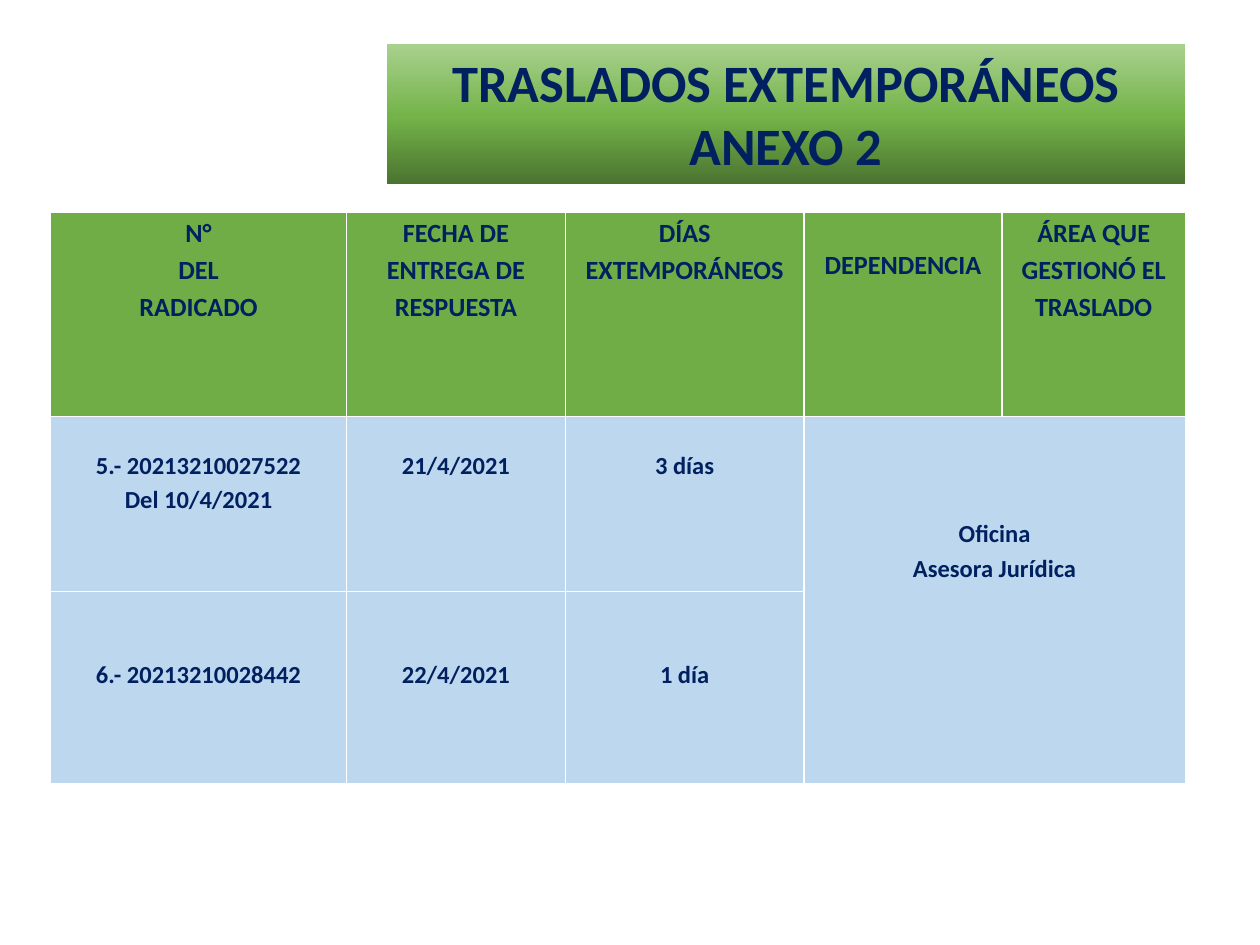
from copy import deepcopy

from pptx import Presentation
from pptx.dml.color import RGBColor
from pptx.enum import shapes, text
from pptx.oxml import parse_xml
from pptx.oxml.ns import nsdecls, qn
from pptx.util import Pt

NAVY, GREEN, PALE_BLUE, WHITE = "002060", "70AD47", "BDD7EE", "FFFFFF"
TITLE_GRADIENT = [(0, "4B7430"), (0.48, "74B349"), (1, "A9D18E")]

COLUMN_WIDTHS = [169, 125.2, 136.2, 113.3, 104.8]
ROW_HEIGHTS = [116.5, 100, 110]
# Each cell: its lines and the space above them
HEADINGS = [
    (["N°", "DEL", "RADICADO"], 0),
    (["FECHA DE", "ENTREGA DE", "RESPUESTA"], 0),
    (["DÍAS EXTEMPORÁNEOS"], 0),
    (["DEPENDENCIA"], 18.3),
    (["ÁREA QUE GESTIONÓ EL TRASLADO"], 0),
]
TRANSFERS = [
    [(["5.- 20213210027522", "Del 10/4/2021"], 17.1),
     (["21/4/2021"], 17.1),
     (["3 días"], 17.1),
     (["Oficina", "Asesora Jurídica"], 56.3)],
    [(["6.- 20213210028442"], 36.7),
     (["22/4/2021"], 36.7),
     (["1 día"], 36.7)],
]


def color(hex_string):
    return RGBColor.from_string(hex_string)


def write_lines(frame, lines, size, spacing=None):
    frame.word_wrap = True
    for index, line in enumerate(lines):
        paragraph = frame.paragraphs[0] if index == 0 else frame.add_paragraph()
        paragraph.text = line
        paragraph.alignment = text.PP_ALIGN.CENTER
        paragraph.line_spacing = spacing
        paragraph.font.name = "Calibri"
        paragraph.font.size = Pt(size)
        paragraph.font.bold = True
        paragraph.font.color.rgb = color(NAVY)


def add_title(slide, left, top, width, height):
    banner = slide.shapes.add_shape(
        shapes.MSO_SHAPE.RECTANGLE, Pt(left), Pt(top), Pt(width), Pt(height))
    banner.shadow.inherit = False
    banner.line.fill.background()

    # Three-stop gradient running upwards
    banner.fill.gradient()
    banner.fill.gradient_angle = 90
    stop_list = banner._element.spPr.find(".//" + qn("a:gsLst"))
    stop_list.append(deepcopy(stop_list[-1]))
    for stop, (position, shade) in zip(banner.fill.gradient_stops, TITLE_GRADIENT):
        stop.position = position
        stop.color.rgb = color(shade)

    banner.text_frame.vertical_anchor = text.MSO_ANCHOR.TOP
    write_lines(banner.text_frame, ["TRASLADOS EXTEMPORÁNEOS", "ANEXO 2"], 30)


def style_cell(cell, fill):
    # Borders come before the fill in the cell properties
    properties = cell._tc.get_or_add_tcPr()
    for side in ("lnL", "lnR", "lnT", "lnB"):
        properties.append(parse_xml(
            f'<a:{side} {nsdecls("a")} w="{Pt(1)}"><a:solidFill>'
            f'<a:srgbClr val="{WHITE}"/></a:solidFill></a:{side}>'))
    cell.fill.solid()
    cell.fill.fore_color.rgb = color(fill)
    cell.margin_left = cell.margin_right = Pt(5)
    cell.margin_top = cell.margin_bottom = 0


def add_transfers_table(slide, left, top, width, height):
    table = slide.shapes.add_table(
        len(ROW_HEIGHTS), len(COLUMN_WIDTHS),
        Pt(left), Pt(top), Pt(width), Pt(height)).table
    for column, column_width in zip(table.columns, COLUMN_WIDTHS):
        column.width = Pt(column_width)
    for row, row_height in zip(table.rows, ROW_HEIGHTS):
        row.height = Pt(row_height)

    for row_index, row in enumerate(table.rows):
        for cell in row.cells:
            style_cell(cell, GREEN if row_index == 0 else PALE_BLUE)

    # One office covers both transfers
    table.cell(1, 3).merge(table.cell(2, 4))

    for row_index, entries in enumerate([HEADINGS] + TRANSFERS):
        for column_index, (lines, space_above) in enumerate(entries):
            cell = table.cell(row_index, column_index)
            cell.margin_top = Pt(space_above)
            write_lines(cell.text_frame, lines, 15 if row_index == 0 else 14, 1.15)


def main():
    deck = Presentation()
    deck.slide_width, deck.slide_height = Pt(720), Pt(540)
    slide = deck.slides.add_slide(deck.slide_layouts[6])
    add_title(slide, 221, 25, 456.5, 80)
    add_transfers_table(slide, 29, 121.5, sum(COLUMN_WIDTHS), sum(ROW_HEIGHTS))
    deck.save("out.pptx")


if __name__ == "__main__":
    main()
